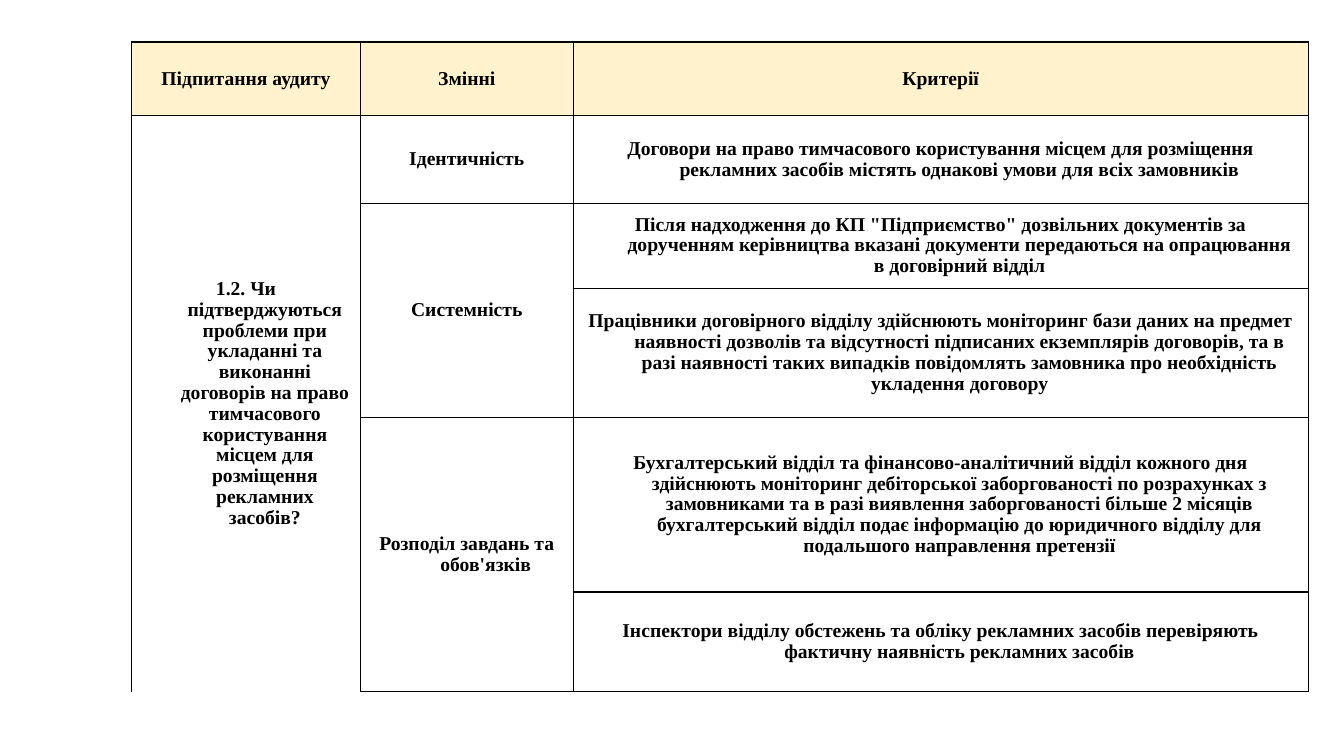
from lxml import etree
from pptx import Presentation, util as u
from pptx.dml.color import RGBColor
from pptx.enum import text
from pptx.oxml.ns import qn

HEADERS = ["Підпитання аудиту", "Змінні", "Критерії"]
QUESTION = ("1.2. Чи підтверджуються проблеми при укладанні та виконанні договорів "
            "на право тимчасового користування місцем для розміщення рекламних засобів?")
VARIABLES = [("Ідентичність", 1), ("Системність", 2), ("Розподіл завдань та обов'язків", 2)]
CRITERIA = [
    "Договори на право тимчасового користування місцем для розміщення рекламних "
    "засобів містять однакові умови для всіх замовників",
    "Після надходження до КП \"Підприємство\" дозвільних документів за дорученням "
    "керівництва вказані документи передаються на опрацювання в договірний відділ",
    "Працівники договірного відділу здійснюють моніторинг бази даних на предмет "
    "наявності дозволів та відсутності підписаних екземплярів договорів, та в разі "
    "наявності таких випадків повідомлять замовника про необхідність укладення договору",
    "Бухгалтерський відділ та фінансово-аналітичний відділ кожного дня здійснюють "
    "моніторинг дебіторської заборгованості по розрахунках з замовниками та в разі "
    "виявлення заборгованості більше 2 місяців бухгалтерський відділ подає інформацію "
    "до юридичного відділу для подальшого направлення претензії",
    "Інспектори відділу обстежень та обліку рекламних засобів перевіряють фактичну "
    "наявність рекламних засобів",
]
COLS = [163.5, 152, 525]
ROWS = [52.7, 62.5, 60.7, 92.2, 124.8, 71.2]


def color(value):
    return RGBColor.from_string(value)


def write(tf, content, font="Times New Roman", size=14, ink="000000", bold=True,
          indent=27, spacing=0.96):
    p = tf.paragraphs[0]
    p.alignment = text.PP_ALIGN.CENTER
    p.line_spacing = spacing
    pPr = p._p.get_or_add_pPr()
    pPr.set("marL", str(u.Pt(indent)))
    pPr.set("indent", str(-u.Pt(indent)))
    r = p.add_run()
    r.text = content
    r.font.name, r.font.size, r.font.bold = font, u.Pt(size), bold
    r.font.color.rgb = color(ink)


class Deck:
    head, body, line = "FFF2CC", "FFFFFF", "000000"

    def __init__(self, width, height):
        self.prs = Presentation()
        self.prs.slide_width, self.prs.slide_height = u.Pt(width), u.Pt(height)
        self.s = self.prs.slides.add_slide(self.prs.slide_layouts[6])

    def table(self, x, y, cols, rows):
        sp = self.s.shapes.add_table(len(rows), len(cols), u.Pt(x), u.Pt(y),
                                     u.Pt(sum(cols)), u.Pt(sum(rows)))
        table = sp.table
        table.horz_banding = False
        for column, width in zip(table.columns, cols):
            column.width = u.Pt(width)
        for row, height in zip(table.rows, rows):
            row.height = u.Pt(height)
        return table

    def borders(self, cell, sides):
        tcPr = cell._tc.get_or_add_tcPr()
        for side in "LRTB":
            ln = etree.SubElement(tcPr, qn(f"a:ln{side}"), w=str(u.Pt(1)))
            if side in sides:
                fill = etree.SubElement(ln, qn("a:solidFill"))
                etree.SubElement(fill, qn("a:srgbClr"), val=self.line)
            else:
                etree.SubElement(ln, qn("a:noFill"))

    def style(self, table):
        for i, row in enumerate(table.rows):
            for j, cell in enumerate(row.cells):
                self.borders(cell, "LRT" if i and not j else "LRTB")
                cell.fill.solid()
                cell.fill.fore_color.rgb = color(self.body if i else self.head)

    def cell(self, table, row, col, content, span=1):
        cell = table.cell(row, col)
        if span > 1:
            cell.merge(table.cell(row + span - 1, col))
        cell.vertical_anchor = text.MSO_ANCHOR.MIDDLE
        write(cell.text_frame, content)


def main():
    deck = Deck(960, 540)
    table = deck.table(94, 30, COLS, ROWS)
    deck.style(table)
    for col, header in enumerate(HEADERS):
        deck.cell(table, 0, col, header)
    deck.cell(table, 1, 0, QUESTION, span=len(CRITERIA))
    row = 1
    for variable, span in VARIABLES:
        deck.cell(table, row, 1, variable, span)
        row += span
    for row, criterion in enumerate(CRITERIA, 1):
        deck.cell(table, row, 2, criterion)
    deck.prs.save("out.pptx")


if __name__ == "__main__":
    main()
